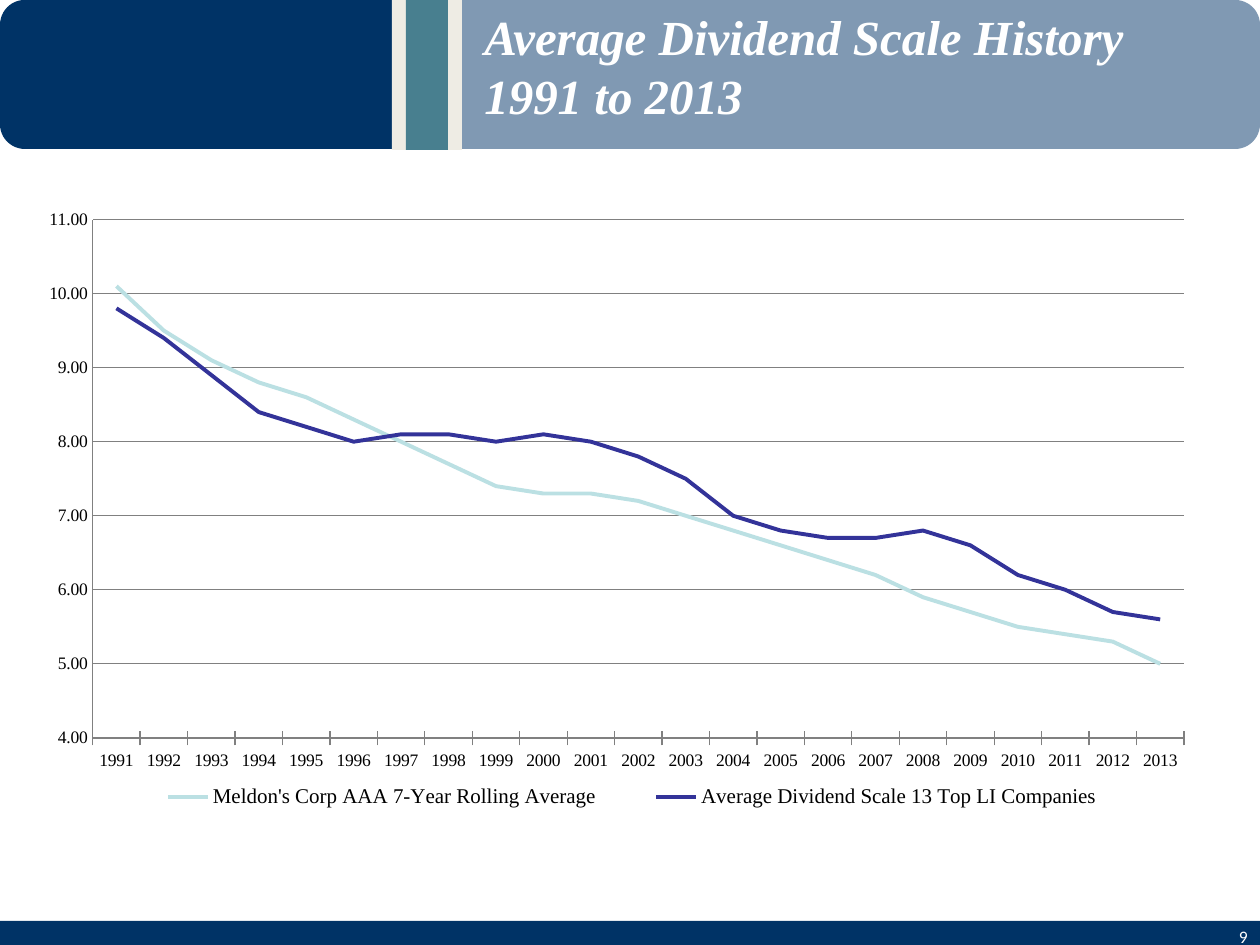
import pptx
import pptx.chart.data
import pptx.util
from pptx.dml.color import RGBColor
from pptx.enum.chart import XL_CHART_TYPE, XL_LEGEND_POSITION, XL_TICK_MARK
from pptx.enum.shapes import MSO_SHAPE
from pptx.enum.text import MSO_ANCHOR, PP_ALIGN
from pptx.oxml import parse_xml
from pptx.oxml.ns import nsdecls, qn

PX = 914400 / 126
NAVY = RGBColor(0x00, 0x33, 0x66)
SLATE = RGBColor(0x80, 0x99, 0xB3)
CREAM = RGBColor(0xEE, 0xEC, 0xE4)
TEAL = RGBColor(0x48, 0x7F, 0x8F)
WHITE = RGBColor(0xFF, 0xFF, 0xFF)
BLACK = RGBColor(0x00, 0x00, 0x00)
GRAY = RGBColor(0x80, 0x80, 0x80)
AQUA = RGBColor(0xBB, 0xE0, 0xE3)
INDIGO = RGBColor(0x33, 0x33, 0x99)


def box(*lengths):
    return [round(n * PX) for n in lengths]


def set_layout(parent, index, target, x, y, w, h):
    """Place a chart part by fractions of the chart area."""
    for old in parent.findall(qn("c:layout")):
        parent.remove(old)
    inner = f'<c:layoutTarget val="{target}"/>' if target else ""
    modes = '<c:xMode val="edge"/><c:yMode val="edge"/>'
    sizes = f'<c:x val="{x}"/><c:y val="{y}"/><c:w val="{w}"/><c:h val="{h}"/>'
    parent.insert(index, parse_xml(
        f'<c:layout {nsdecls("c")}><c:manualLayout>{inner}{modes}{sizes}'
        '</c:manualLayout></c:layout>'))


prs = pptx.Presentation()
prs.slide_width, prs.slide_height = box(1260, 945)
s = prs.slides.add_slide(prs.slide_layouts[6])

# Header panels, footer bar and stripes
for kind, color, place in [
    (MSO_SHAPE.ROUNDED_RECTANGLE, SLATE, (155, 0, 1105, 149)),
    (MSO_SHAPE.ROUNDED_RECTANGLE, NAVY, (0, 0, 449, 149)),
    (MSO_SHAPE.RECTANGLE, NAVY, (0, 921, 1262, 33)),
    (MSO_SHAPE.RECTANGLE, CREAM, (392, 0, 70, 150)),
    (MSO_SHAPE.RECTANGLE, TEAL, (406, 0, 42, 150)),
]:
    sp = s.shapes.add_shape(kind, *box(*place))
    sp.shadow.inherit = False
    sp.fill.solid()
    sp.fill.fore_color.rgb = color
    sp.line.fill.background()

# Dividend chart
cd = pptx.chart.data.CategoryChartData(number_format="0.00")
cd.categories = [str(year) for year in range(1991, 2014)]
cd.add_series("Meldon's Corp AAA 7-Year Rolling Average", [
    10.1, 9.5, 9.1, 8.8, 8.6, 8.3, 8, 7.7, 7.4, 7.3, 7.3, 7.2,
    7, 6.8, 6.6, 6.4, 6.2, 5.9, 5.7, 5.5, 5.4, 5.3, 5])
cd.add_series("Average Dividend Scale 13 Top LI Companies", [
    9.8, 9.4, 8.9, 8.4, 8.2, 8, 8.1, 8.1, 8, 8.1, 8, 7.8,
    7.5, 7, 6.8, 6.7, 6.7, 6.8, 6.6, 6.2, 6, 5.7, 5.6])
chart = s.shapes.add_chart(
    XL_CHART_TYPE.LINE, *box(21, 204, 1176, 624), cd).chart
chart.has_title = False
chart.font.name = "Times New Roman"
chart.font.size = pptx.util.Pt(10)
chart.font.color.rgb = BLACK
chart.plots[0].vary_by_categories = False
for series, color in zip(chart.plots[0].series, (AQUA, INDIGO)):
    series.smooth = False
    series.format.line.color.rgb = color
    series.format.line.width = pptx.util.Pt(2.25)

# Axes
val, cat = chart.value_axis, chart.category_axis
val.minimum_scale, val.maximum_scale, val.major_unit = 4, 11, 1
val.major_tick_mark = XL_TICK_MARK.NONE
cat.major_tick_mark = XL_TICK_MARK.CROSS
val.tick_labels.number_format = "0.00"
val.tick_labels.number_format_is_linked = False
val.has_major_gridlines = True
for part in (val, cat, val.major_gridlines):
    part.format.line.color.rgb = GRAY
    part.format.line.width = pptx.util.Pt(0.75)

# Legend and plot placement
chart.has_legend = True
legend = chart.legend
legend.position = XL_LEGEND_POSITION.BOTTOM
legend.include_in_layout = False
legend.font.size = pptx.util.Pt(12)
legend.font.name = "Times New Roman"
legend.font.color.rgb = BLACK
plot_area = chart.plots[0]._element.getparent()
set_layout(plot_area, 0, "inner", 0.061, 0.025, 0.928, 0.831)
set_layout(legend._element, 1, "", 0.08, 0.92, 0.88, 0.06)

# Title and page number
for place, lines, font, size, strong, align, anchor in [
    ((472, 0, 756, 131), ["Average Dividend Scale History", "1991 to 2013"],
     "Times New Roman", 28, True, PP_ALIGN.LEFT, MSO_ANCHOR.MIDDLE),
    ((0, 920, 1260, 34), ["9"],
     "Calibri", 10, False, PP_ALIGN.RIGHT, MSO_ANCHOR.TOP),
]:
    tf = s.shapes.add_textbox(*box(*place)).text_frame
    tf.word_wrap = True
    tf.vertical_anchor = anchor
    for i, line in enumerate(lines):
        p = tf.add_paragraph() if i else tf.paragraphs[0]
        p.alignment = align
        r = p.add_run()
        r.text = line
        r.font.name = font
        r.font.size = pptx.util.Pt(size)
        r.font.bold = r.font.italic = strong
        r.font.color.rgb = WHITE

prs.save("out.pptx")
